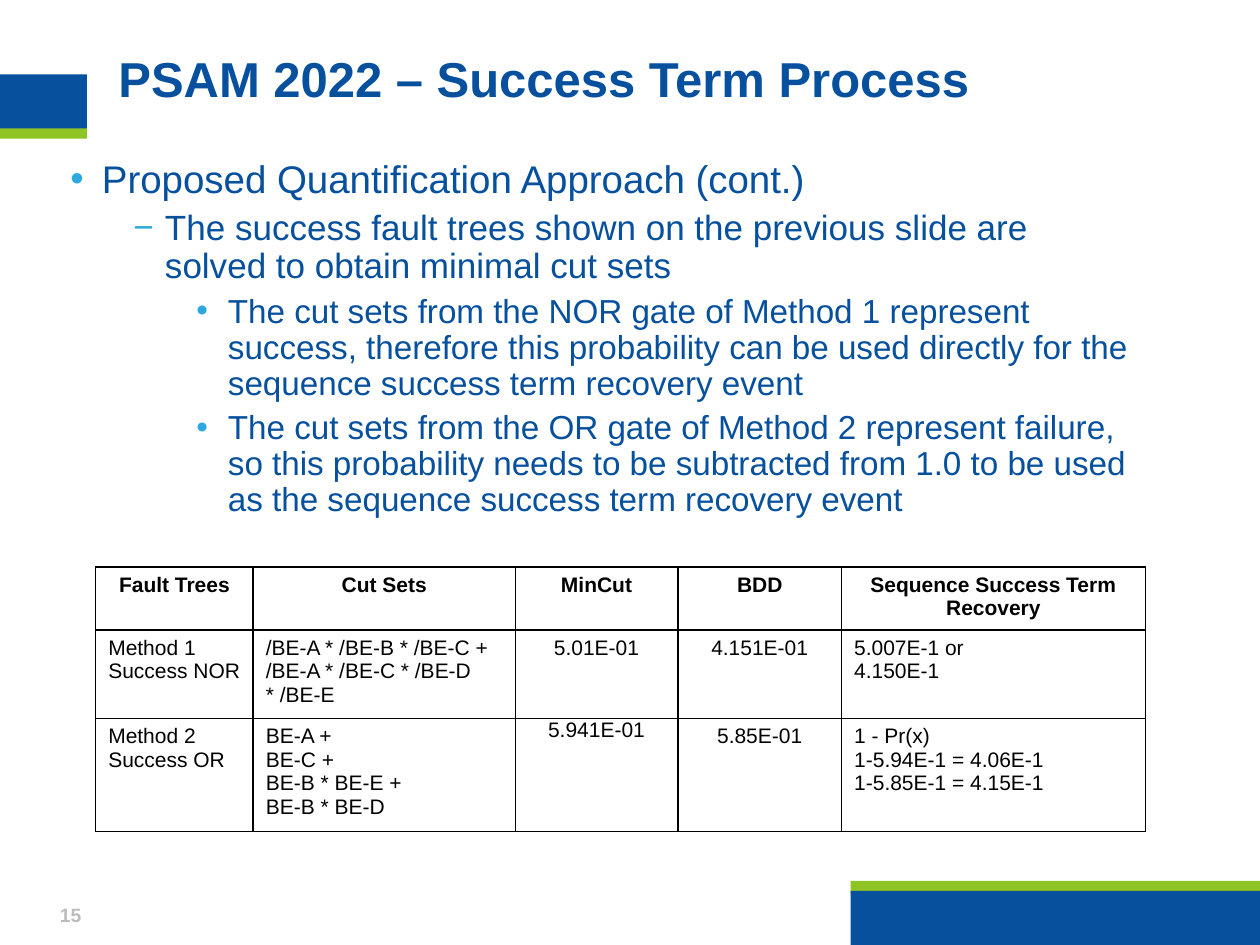
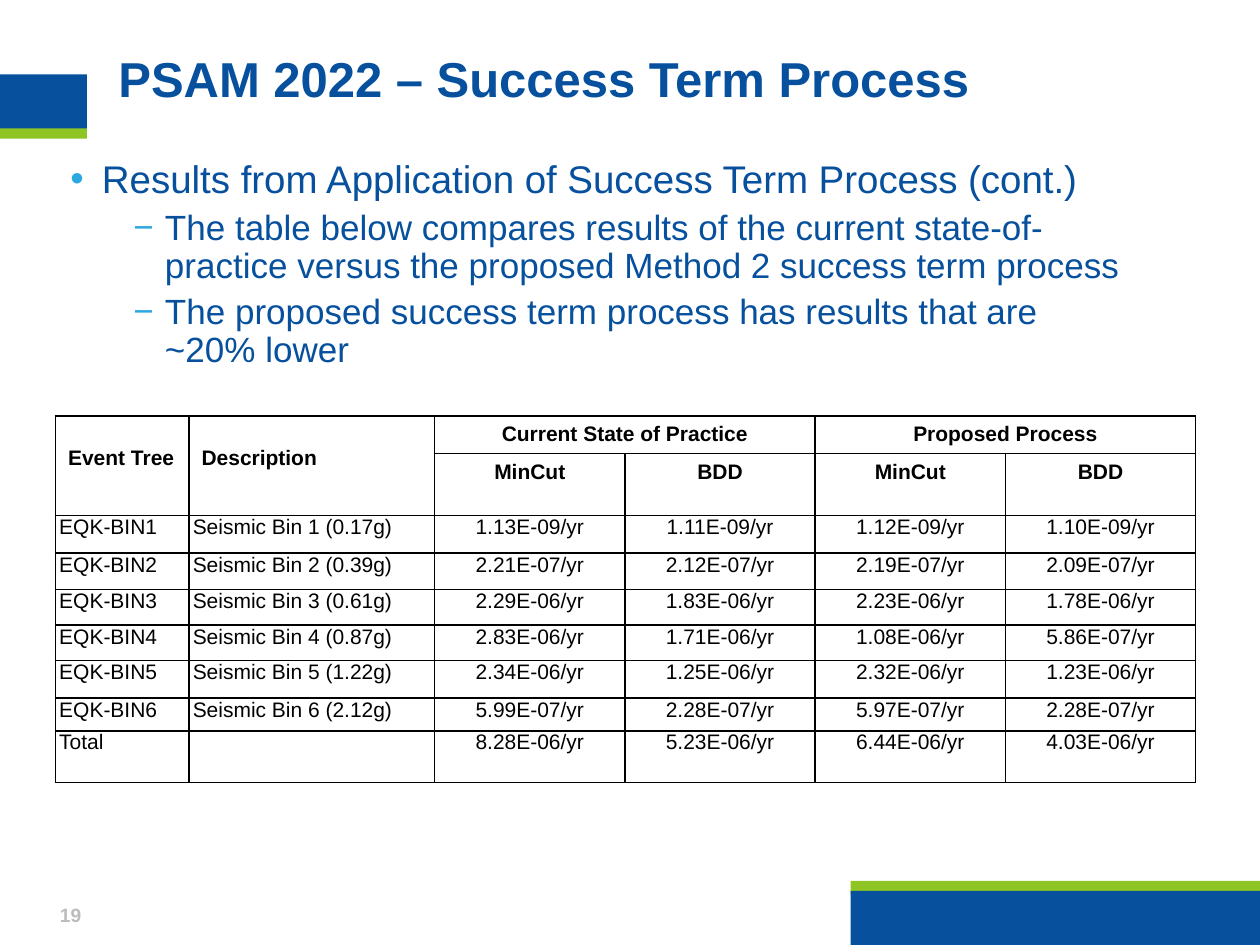
from dataclasses import dataclass
from itertools import product
from typing import NamedTuple

from lxml.etree import SubElement
from pptx import Presentation
from pptx.dml.color import RGBColor
from pptx.enum.shapes import MSO_SHAPE
from pptx.enum.text import MSO_ANCHOR, PP_ALIGN
from pptx.oxml.ns import qn
from pptx.util import Inches, Pt

FONT = "Arial"
BLUE = "06509D"
GREEN = "8EC423"
BULLET_BLUE = "2CA8E1"
GRAY = "BCBCBE"
BLACK = "000000"
TITLE = "PSAM 2022 – Success Term Process"


class Band(NamedTuple):
    left: float
    top: float
    width: float
    height: float
    color: str


class Level(NamedTuple):
    indent: float
    bullet: str
    size: float
    space_before: float


class Bullet(NamedTuple):
    level: int
    text: str


@dataclass
class TableSpec:
    left: float
    top: float
    column_widths: list[float]
    row_heights: list[float]
    rows: list[list[str]]
    header_rows: int
    left_columns: set[int]
    tight_cells: set[tuple[int, int]]
    tight_side: float
    tall_headers: tuple[int, ...] = ()
    wide_headers: tuple[int, ...] = ()


@dataclass
class SlideSpec:
    number: int
    bullets: list[Bullet]
    table: TableSpec


BANDS = [
    Band(6.75, 6.99, 3.25, 0.11, GREEN),
    Band(6.75, 7.07, 3.25, 0.43, BLUE),
    Band(0, 0.99, 0.69, 0.11, GREEN),
    Band(0, 0.59, 0.69, 0.43, BLUE),
]

LEVELS = [
    Level(0.25, "•", 22, 10),
    Level(0.75, "−", 20, 5),
    Level(1.25, "•", 19, 5),
]

CUT_SETS = TableSpec(
    left=0.76,
    top=4.5,
    column_widths=[1.25, 2.08, 1.29, 1.3, 2.41],
    row_heights=[0.48, 0.66, 0.85],
    rows=[
        ["Fault Trees", "Cut Sets", "MinCut", "BDD", "Sequence Success Term Recovery"],
        [
            "Method 1 Success NOR",
            "/BE-A * /BE-B * /BE-C +\n/BE-A * /BE-C * /BE-D * /BE-E",
            "5.01E-01",
            "4.151E-01",
            "5.007E-1 or\n4.150E-1",
        ],
        [
            "Method 2 Success OR",
            "BE-A +\nBE-C +\nBE-B * BE-E +\nBE‑B * BE-D",
            "5.941E-01",
            "5.85E-01",
            "1 - Pr(x)\n1-5.94E-1 = 4.06E-1\n1-5.85E-1 = 4.15E-1",
        ],
    ],
    header_rows=1,
    left_columns={0, 1, 4},
    tight_cells={(2, 2)},
    tight_side=0.07,
)

RESULTS = TableSpec(
    left=0.44,
    top=3.3,
    column_widths=[1.06, 1.95] + [1.51] * 4,
    row_heights=[0.29, 0.47, 0.3, 0.29, 0.28, 0.28, 0.3, 0.26, 0.41],
    rows=[
        ["Event Tree", "Description", "Current State of Practice", "", "Proposed Process", ""],
        ["", ""] + ["MinCut", "BDD"] * 2,
        ["EQK-BIN1", "Seismic Bin 1 (0.17g)", "1.13E-09/yr", "1.11E-09/yr", "1.12E-09/yr", "1.10E-09/yr"],
        ["EQK-BIN2", "Seismic Bin 2 (0.39g)", "2.21E-07/yr", "2.12E-07/yr", "2.19E-07/yr", "2.09E-07/yr"],
        ["EQK-BIN3", "Seismic Bin 3 (0.61g)", "2.29E-06/yr", "1.83E-06/yr", "2.23E-06/yr", "1.78E-06/yr"],
        ["EQK-BIN4", "Seismic Bin 4 (0.87g)", "2.83E-06/yr", "1.71E-06/yr", "1.08E-06/yr", "5.86E-07/yr"],
        ["EQK-BIN5", "Seismic Bin 5 (1.22g)", "2.34E-06/yr", "1.25E-06/yr", "2.32E-06/yr", "1.23E-06/yr"],
        ["EQK-BIN6", "Seismic Bin 6 (2.12g)", "5.99E-07/yr", "2.28E-07/yr", "5.97E-07/yr", "2.28E-07/yr"],
        ["Total", "", "8.28E-06/yr", "5.23E-06/yr", "6.44E-06/yr", "4.03E-06/yr"],
    ],
    header_rows=2,
    left_columns={0, 1},
    tight_cells=set(product(range(2, 9), range(6))),
    tight_side=0.03,
    tall_headers=(0, 1),
    wide_headers=(2, 4),
)

SLIDES = [
    SlideSpec(
        15,
        [
            Bullet(0, "Proposed Quantification Approach (cont.)"),
            Bullet(1, "The success fault trees shown on the previous slide are solved to obtain minimal cut sets"),
            Bullet(2, "The cut sets from the NOR gate of Method 1 represent success, therefore this probability "
                      "can be used directly for the sequence success term recovery event"),
            Bullet(2, "The cut sets from the OR gate of Method 2 represent failure, so this probability needs "
                      "to be subtracted from 1.0 to be used as the sequence success term recovery event"),
        ],
        CUT_SETS,
    ),
    SlideSpec(
        19,
        [
            Bullet(0, "Results from Application of Success Term Process (cont.)"),
            Bullet(1, "The table below compares results of the current state-of-practice versus the proposed "
                      "Method 2 success term process"),
            Bullet(1, "The proposed success term process has results that are ~20% lower"),
        ],
        RESULTS,
    ),
]


def rgb(color: str) -> RGBColor:
    return RGBColor.from_string(color)


def write(paragraph, text: str, *, size: float, color: str = BLUE, bold: bool = False,
          align=PP_ALIGN.LEFT, line_spacing: float = 1.0, space_before: float = 0) -> None:
    paragraph.alignment = align
    paragraph.line_spacing = line_spacing
    paragraph.space_before = Pt(space_before)
    if not text:
        return
    run = paragraph.add_run()
    run.text = text
    run.font.name = FONT
    run.font.size = Pt(size)
    run.font.bold = bold
    run.font.color.rgb = rgb(color)


def set_margins(target, left: float, top: float, right: float, bottom: float) -> None:
    target.margin_left, target.margin_top = Inches(left), Inches(top)
    target.margin_right, target.margin_bottom = Inches(right), Inches(bottom)


def add_band(slide, band: Band) -> None:
    shape = slide.shapes.add_shape(MSO_SHAPE.RECTANGLE, *map(Inches, band[:4]))
    shape.shadow.inherit = False
    shape.fill.solid()
    shape.fill.fore_color.rgb = rgb(band.color)
    shape.line.fill.background()


def add_title(slide) -> None:
    title = slide.shapes.title
    title.left, title.top, title.width, title.height = map(Inches, (0.94, 0.44, 8.54, 0.73))
    frame = title.text_frame
    frame.vertical_anchor = MSO_ANCHOR.TOP
    set_margins(frame, 0, 0, 0.1, 0.05)
    write(frame.paragraphs[0], TITLE, size=28, bold=True, line_spacing=0.9)


def add_text_frame(slide, left: float, top: float, width: float, height: float):
    box = slide.shapes.add_textbox(*map(Inches, (left, top, width, height)))
    box.text_frame.word_wrap = True
    return box.text_frame


def set_bullet(paragraph, level: Level) -> None:
    properties = paragraph._p.get_or_add_pPr()
    properties.set("marL", str(Inches(level.indent)))
    properties.set("indent", str(Inches(-0.25)))
    bullet_color = SubElement(properties, qn("a:buClr"))
    SubElement(bullet_color, qn("a:srgbClr"), val=BULLET_BLUE)
    SubElement(properties, qn("a:buFont"), typeface=FONT)
    SubElement(properties, qn("a:buChar"), char=level.bullet)


def add_bullets(slide, bullets: list[Bullet]) -> None:
    frame = add_text_frame(slide, 0.56, 1.27, 8.54, 4.76)
    set_margins(frame, 0, 0, 0.1, 0.05)
    for index, bullet in enumerate(bullets):
        paragraph = frame.add_paragraph() if index else frame.paragraphs[0]
        level = LEVELS[bullet.level]
        paragraph.level = bullet.level
        set_bullet(paragraph, level)
        write(paragraph, bullet.text, size=level.size, line_spacing=0.9,
              space_before=level.space_before if index else 0)


def add_slide_number(slide, number: int) -> None:
    frame = add_text_frame(slide, 0.35, 7.17, 0.42, 0.3)
    frame.vertical_anchor = MSO_ANCHOR.MIDDLE
    set_margins(frame, 0.1, 0.05, 0.1, 0.17)
    write(frame.paragraphs[0], str(number), size=11, color=GRAY, bold=True, align=PP_ALIGN.CENTER)


def set_borders(cell) -> None:
    properties = cell._tc.get_or_add_tcPr()
    for side in ("lnL", "lnR", "lnT", "lnB"):
        line = SubElement(properties, qn(f"a:{side}"), w=str(Pt(1)))
        fill = SubElement(line, qn("a:solidFill"))
        SubElement(fill, qn("a:srgbClr"), val=BLACK)


def fill_cell(cell, spec: TableSpec, row: int, column: int) -> None:
    is_header = row < spec.header_rows
    is_tall = is_header and column in spec.tall_headers
    set_borders(cell)
    cell.fill.background()
    if (row, column) in spec.tight_cells:
        set_margins(cell, spec.tight_side, 0, spec.tight_side, 0)
    else:
        set_margins(cell, 0.1, 0.24 if is_tall and row == 0 else 0.05, 0.1, 0.05)
    is_left = is_tall or (not is_header and column in spec.left_columns)
    for index, text in enumerate(spec.rows[row][column].split("\n")):
        frame = cell.text_frame
        paragraph = frame.add_paragraph() if index else frame.paragraphs[0]
        write(paragraph, text, size=12, color=BLACK, bold=is_header,
              align=PP_ALIGN.LEFT if is_left else PP_ALIGN.CENTER)


def add_data_table(slide, spec: TableSpec) -> None:
    size = len(spec.row_heights), len(spec.column_widths)
    extent = sum(spec.column_widths), sum(spec.row_heights)
    table = slide.shapes.add_table(*size, *map(Inches, (spec.left, spec.top, *extent))).table
    table.first_row = table.horz_banding = False
    for column, width in zip(table.columns, spec.column_widths):
        column.width = Inches(width)
    for row, height in zip(table.rows, spec.row_heights):
        row.height = Inches(height)
    for row, column in product(*map(range, size)):
        fill_cell(table.cell(row, column), spec, row, column)
    for column in spec.tall_headers:
        table.cell(0, column).merge(table.cell(1, column))
    for column in spec.wide_headers:
        table.cell(0, column).merge(table.cell(0, column + 1))


def add_slide(presentation, spec: SlideSpec) -> None:
    slide = presentation.slides.add_slide(presentation.slide_layouts.get_by_name("Title Only"))
    for band in BANDS:
        add_band(slide, band)
    add_title(slide)
    add_bullets(slide, spec.bullets)
    add_slide_number(slide, spec.number)
    add_data_table(slide, spec.table)


def main() -> None:
    presentation = Presentation()
    presentation.slide_width, presentation.slide_height = Inches(10), Inches(7.5)
    for spec in SLIDES:
        add_slide(presentation, spec)
    presentation.save("out.pptx")


if __name__ == "__main__":
    main()
